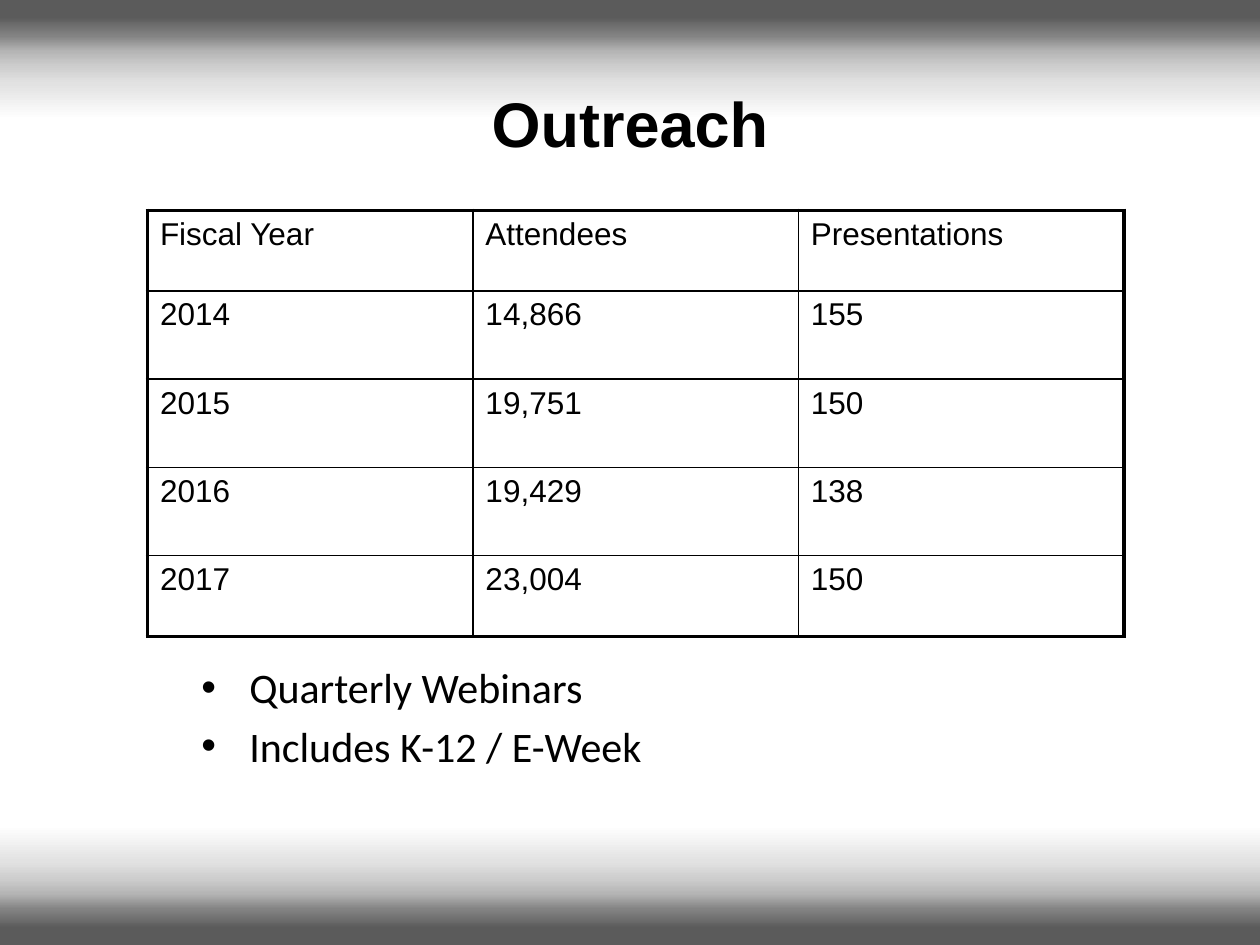
"""Build the Outreach slide: gradient bands, attendance table and bullets."""
import pptx
import pptx.dml.color
import pptx.enum.shapes
import pptx.enum.text
import pptx.oxml
import pptx.oxml.ns
import pptx.util

COLOURS = {"ink": "000000", "paper": "FFFFFF", "mist": "E2E2E2", "silver": "CECECE",
           "ash": "B5B5B5", "slate": "838383", "iron": "5B5B5B"}
FADE = [(0, "paper"), (7, "paper"), (35, "mist"), (48, "silver"), (60, "ash"),
        (72, "slate"), (87, "iron"), (100, "iron")]
FORMATS = {
    "title": {"name": "Arial", "size": pptx.util.Pt(36), "bold": True},
    "bullet": {"name": "Calibri", "size": pptx.util.Pt(24)},
    "cell": {"name": "Arial", "size": pptx.util.Pt(18)},
}
RECORDS = [
    ("Fiscal Year", "Attendees", "Presentations"),
    ("2014", "14,866", "155"),
    ("2015", "19,751", "150"),
    ("2016", "19,429", "138"),
    ("2017", "23,004", "150"),
]
BULLETS = ["Quarterly Webinars", "Includes K-12 / E-Week"]
GRID_COLUMNS, GRID_ROWS = 100, 75
OUTER_LINE, INNER_LINE = 2.25, 1


class SlideBuilder:
    """Hold the style and the current page, measured on a 100 by 75 grid."""

    def __init__(self, deck):
        self.deck = deck
        self.page = deck.slides.add_slide(deck.slide_layouts[6])

    def place(self, left, top, width, height):
        """Turn grid columns and rows into slide lengths."""
        column = self.deck.slide_width / GRID_COLUMNS
        row = self.deck.slide_height / GRID_ROWS
        return [round(length) for length in
                (left * column, top * row, width * column, height * row)]

    def element(self, tag, content="", **attributes):
        """Make one drawing element."""
        names = " ".join(f'{key}="{value}"' for key, value in attributes.items())
        space = pptx.oxml.ns.nsdecls("a")
        return pptx.oxml.parse_xml(f"<a:{tag} {space} {names}>{content}</a:{tag}>")

    def style(self, para, kind):
        """Apply a named text format to a paragraph."""
        for name, value in FORMATS[kind].items():
            setattr(para.font, name, value)
        para.font.color.rgb = pptx.dml.color.RGBColor.from_string(COLOURS["ink"])

    def band(self, top, height, rotation=0):
        """Draw a full-width band that fades to white."""
        box = self.page.shapes.add_shape(
            pptx.enum.shapes.MSO_SHAPE.RECTANGLE, *self.place(0, top, GRID_COLUMNS, height))
        box.rotation = rotation
        box.shadow.inherit = False
        box.line.fill.background()
        box.fill.gradient()
        box.fill.gradient_angle = 90
        stops = box.element.spPr.find(".//" + pptx.oxml.ns.qn("a:gsLst"))
        for stop in list(stops):
            stops.remove(stop)
        for share, colour in FADE:
            content = f'<a:srgbClr val="{COLOURS[colour]}"/>'
            stops.append(self.element("gs", content, pos=share * 1000))

    def text(self, lines, kind, area, anchor="TOP", align="LEFT", bulleted=False):
        """Add a text box with one paragraph for each line."""
        frame = self.page.shapes.add_textbox(*self.place(*area)).text_frame
        frame.word_wrap = True
        frame.vertical_anchor = pptx.enum.text.MSO_ANCHOR[anchor]
        for index, line in enumerate(lines):
            para = frame.add_paragraph() if index else frame.paragraphs[0]
            para.text = line
            para.alignment = pptx.enum.text.PP_ALIGN[align]
            if index:
                para.space_before = pptx.util.Pt(4.8)
            if bulleted:
                properties = para._p.get_or_add_pPr()
                indent = pptx.util.Inches(0.38)
                properties.set("marL", str(indent))
                properties.set("indent", str(-indent))
                properties.append(self.element("buFont", typeface="Arial"))
                properties.append(self.element("buChar", char="•"))
            self.style(para, kind)

    def border(self, cell, side, points):
        """Draw one side of a table cell."""
        content = f'<a:solidFill><a:srgbClr val="{COLOURS["ink"]}"/></a:solidFill>'
        line = self.element(f"ln{side}", content, w=pptx.util.Pt(points))
        cell._tc.get_or_add_tcPr().append(line)

    def table(self, records, area, heights):
        """Add a ruled table with a heavier outer frame."""
        last_row, last_column = len(records) - 1, len(records[0]) - 1
        table = self.page.shapes.add_table(
            len(records), len(records[0]), *self.place(*area)).table
        table.first_row = table.horz_banding = False
        for row, height in zip(table.rows, heights):
            row.height = self.place(0, 0, 0, height)[3]
        for row, record in enumerate(records):
            for column, value in enumerate(record):
                cell = table.cell(row, column)
                cell.text = value
                self.style(cell.text_frame.paragraphs[0], "cell")
                edges = {"L": column == 0, "R": column == last_column,
                         "T": row == 0, "B": row == last_row}
                for side, outer in edges.items():
                    self.border(cell, side, OUTER_LINE if outer else INNER_LINE)
                cell.fill.background()


def main():
    """Build and save the deck."""
    deck = pptx.Presentation()
    deck.slide_width, deck.slide_height = pptx.util.Inches(10), pptx.util.Inches(7.5)
    builder = SlideBuilder(deck)
    builder.band(0, 10.2)
    builder.band(64.8, 10.2, rotation=180)
    builder.text(["Outreach"], "title", (5, 4.1, 90, 11.2), "MIDDLE", "CENTER")
    builder.text(BULLETS, "bullet", (15, 52, 44.2, 11.6), bulleted=True)
    builder.table(RECORDS, (11.7, 16.7, 77.5, 33.8), [6.4, 7, 7, 7, 6.4])
    deck.save("out.pptx")


if __name__ == "__main__":
    main()
